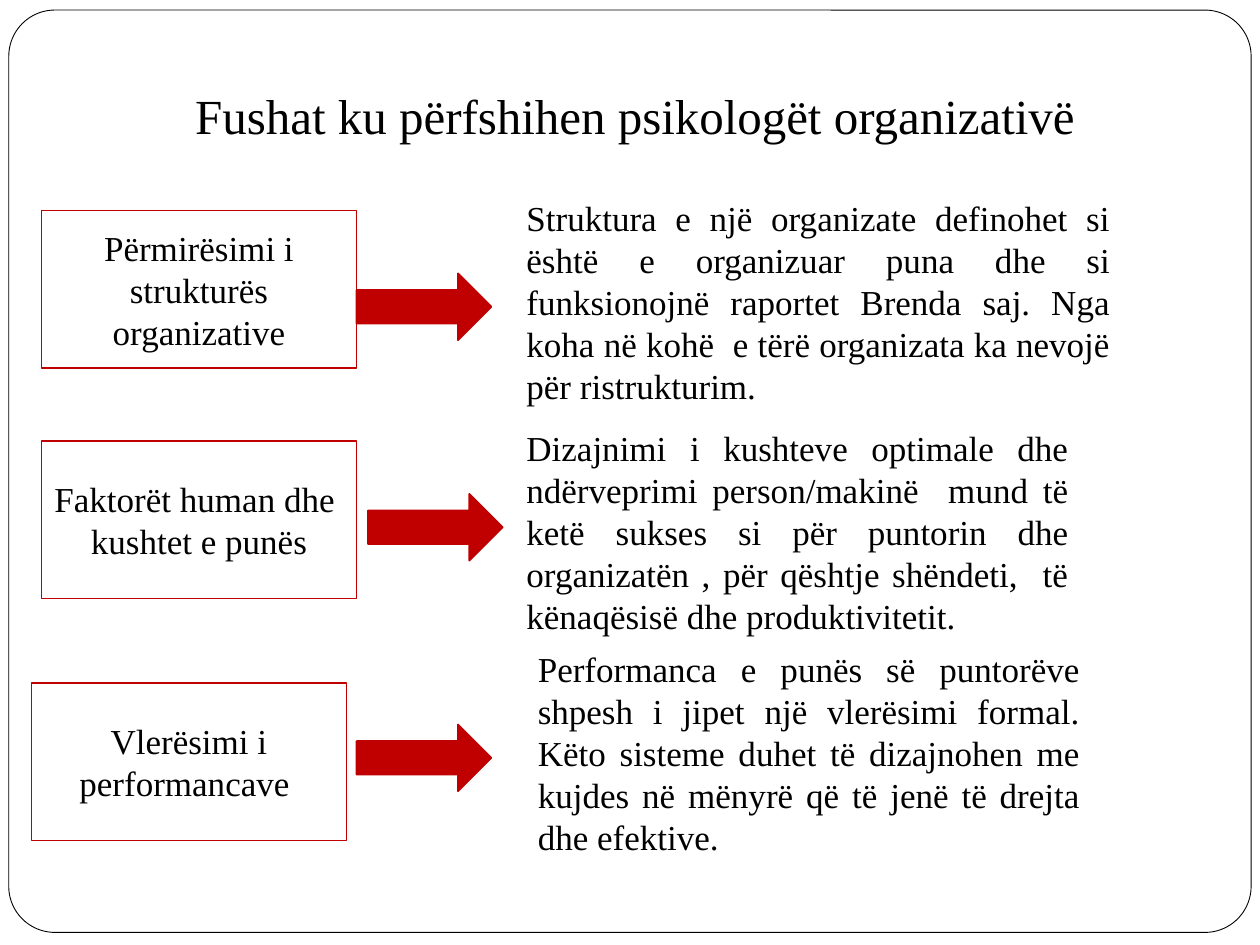
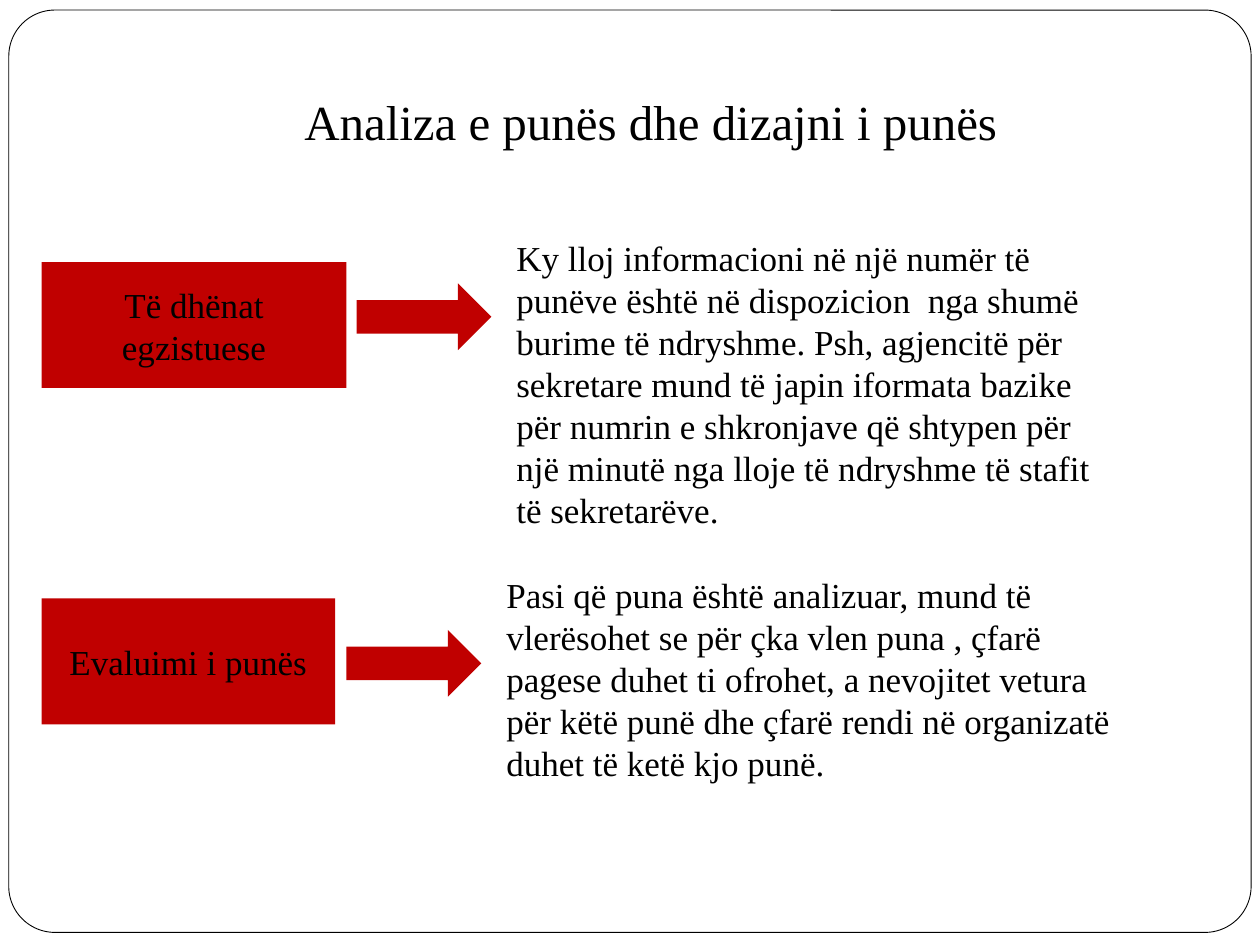
"""Build two slides on the fields and methods of organizational psychology."""
from dataclasses import dataclass
from typing import Optional

from pptx import Presentation
from pptx.dml.color import RGBColor
from pptx.enum.shapes import MSO_SHAPE
from pptx.enum.text import MSO_ANCHOR, PP_ALIGN
from pptx.shapes.autoshape import Shape
from pptx.slide import Slide
from pptx.util import Inches, Pt

RECTANGLE = MSO_SHAPE.RECTANGLE
ROUNDED = MSO_SHAPE.ROUNDED_RECTANGLE
ARROW = MSO_SHAPE.RIGHT_ARROW
LEFT, CENTER, JUSTIFY = PP_ALIGN.LEFT, PP_ALIGN.CENTER, PP_ALIGN.JUSTIFY
TOP, MIDDLE = MSO_ANCHOR.TOP, MSO_ANCHOR.MIDDLE

COLORS = {"paper": "FFFFFF", "ink": "000000", "accent": "C00000"}
FONT = "Times New Roman"
TITLE_SIZE, BODY_SIZE = 28, 20
ARROW_SIZE = (1.07, 0.53)

Box = tuple[float, float, float, float]


@dataclass(frozen=True)
class Topic:
    """A labelled box with an arrow to its explanation."""
    label: str
    label_box: Box
    arrow_at: tuple[float, float]
    explanation: str
    explanation_box: Box


@dataclass(frozen=True)
class TopicSlide:
    """A title, its topics and the style they share."""
    title: str
    title_box: Box
    topics: list[Topic]
    label_fill: Optional[str]
    outline: Optional[str]
    align: PP_ALIGN
    anchor: MSO_ANCHOR


SLIDES = [
    TopicSlide(
        "Fushat ku përfshihen psikologët organizativë",
        (0.58, 0.33, 8.92, 1.17),
        [
            Topic(
                "Përmirësimi i strukturës organizative",
                (0.33, 1.67, 2.5, 1.25),
                (2.83, 2.17),
                "Struktura e një organizate definohet si është e organizuar puna "
                "dhe si funksionojnë raportet Brenda saj. Nga koha në kohë  e tërë "
                "organizata ka nevojë për ristrukturim.",
                (4.08, 1.5, 4.83, 1.78),
            ),
            Topic(
                "Faktorët human dhe  kushtet e punës",
                (0.33, 3.5, 2.5, 1.25),
                (2.92, 3.92),
                "Dizajnimi i kushteve optimale dhe ndërveprimi person/makinë  mund "
                "të ketë sukses si për puntorin dhe organizatën , për qështje "
                "shëndeti,  të kënaqësisë dhe produktivitetit.",
                (4.08, 3.33, 4.5, 1.78),
            ),
            Topic(
                "Vlerësimi i performancave ",
                (0.25, 5.42, 2.5, 1.25),
                (2.83, 5.75),
                "Performanca e punës së puntorëve shpesh i jipet një vlerësimi "
                "formal. Këto sisteme duhet të dizajnohen me kujdes në mënyrë që "
                "të jenë të drejta dhe efektive.",
                (4.17, 5.08, 4.5, 1.78),
            ),
        ],
        label_fill=None, outline="accent", align=JUSTIFY, anchor=MIDDLE,
    ),
    TopicSlide(
        "Analiza e punës dhe dizajni i punës",
        (0.75, 0.42, 8.83, 1.08),
        [
            Topic(
                "Të dhënat egzistuese",
                (0.33, 2.08, 2.42, 1),
                (2.83, 2.25),
                "Ky lloj informacioni në një numër të punëve është në dispozicion  "
                "nga shumë burime të ndryshme. Psh, agjencitë për sekretare mund të "
                "japin iformata bazike për numrin e shkronjave që shtypen për një "
                "minutë nga lloje të ndryshme të stafit të sekretarëve.",
                (4, 1.83, 5, 2.46),
            ),
            Topic(
                "Evaluimi i punës",
                (0.33, 4.75, 2.33, 1),
                (2.75, 5),
                "Pasi që puna është analizuar, mund të vlerësohet se për çka vlen "
                "puna , çfarë pagese duhet ti ofrohet, a nevojitet vetura për këtë "
                "punë dhe çfarë rendi në organizatë duhet të ketë kjo punë.",
                (3.92, 4.5, 5, 1.78),
            ),
        ],
        label_fill="accent", outline=None, align=LEFT, anchor=TOP,
    ),
]


def color(name: str) -> RGBColor:
    return RGBColor.from_string(COLORS[name])


def write(shape: Shape, text: str, *, size: int = BODY_SIZE,
          align: PP_ALIGN = CENTER, anchor: MSO_ANCHOR = MIDDLE) -> None:
    frame = shape.text_frame
    frame.word_wrap = True
    frame.vertical_anchor = anchor
    paragraph = frame.paragraphs[0]
    paragraph.alignment = align
    run = paragraph.add_run()
    run.text = text
    run.font.name = FONT
    run.font.size = Pt(size)
    run.font.color.rgb = color("ink")


def add_figure(slide: Slide, kind: MSO_SHAPE, box: Box, *, fill: Optional[str] = None,
               outline: Optional[str] = None, width: float = 1) -> Shape:
    figure = slide.shapes.add_shape(kind, *map(Inches, box))
    figure.shadow.inherit = False
    if fill:
        figure.fill.solid()
        figure.fill.fore_color.rgb = color(fill)
    else:
        figure.fill.background()
    if outline:
        figure.line.color.rgb = color(outline)
        figure.line.width = Pt(width)
    else:
        figure.line.fill.background()
    return figure


def add_text(slide: Slide, text: str, box: Box, **style) -> None:
    write(slide.shapes.add_textbox(*map(Inches, box)), text, **style)


def add_frame(slide: Slide) -> None:
    frame = add_figure(slide, ROUNDED, (0.07, 0.08, 9.86, 7.32),
                       fill="paper", outline="ink", width=0.5)
    frame.adjustments[0] = 0.05


def add_topic(slide: Slide, topic: Topic, style: TopicSlide) -> None:
    label = add_figure(slide, RECTANGLE, topic.label_box,
                       fill=style.label_fill, outline=style.outline)
    write(label, topic.label)
    add_figure(slide, ARROW, topic.arrow_at + ARROW_SIZE,
               fill="accent", outline=style.outline)
    add_text(slide, topic.explanation, topic.explanation_box,
             align=style.align, anchor=style.anchor)


def main() -> None:
    deck = Presentation()
    deck.slide_width, deck.slide_height = Inches(10), Inches(7.5)
    blank = deck.slide_layouts[6]
    for content in SLIDES:
        slide = deck.slides.add_slide(blank)
        add_frame(slide)
        add_text(slide, content.title, content.title_box, size=TITLE_SIZE)
        for topic in content.topics:
            add_topic(slide, topic, content)
    deck.save("out.pptx")


if __name__ == "__main__":
    main()
